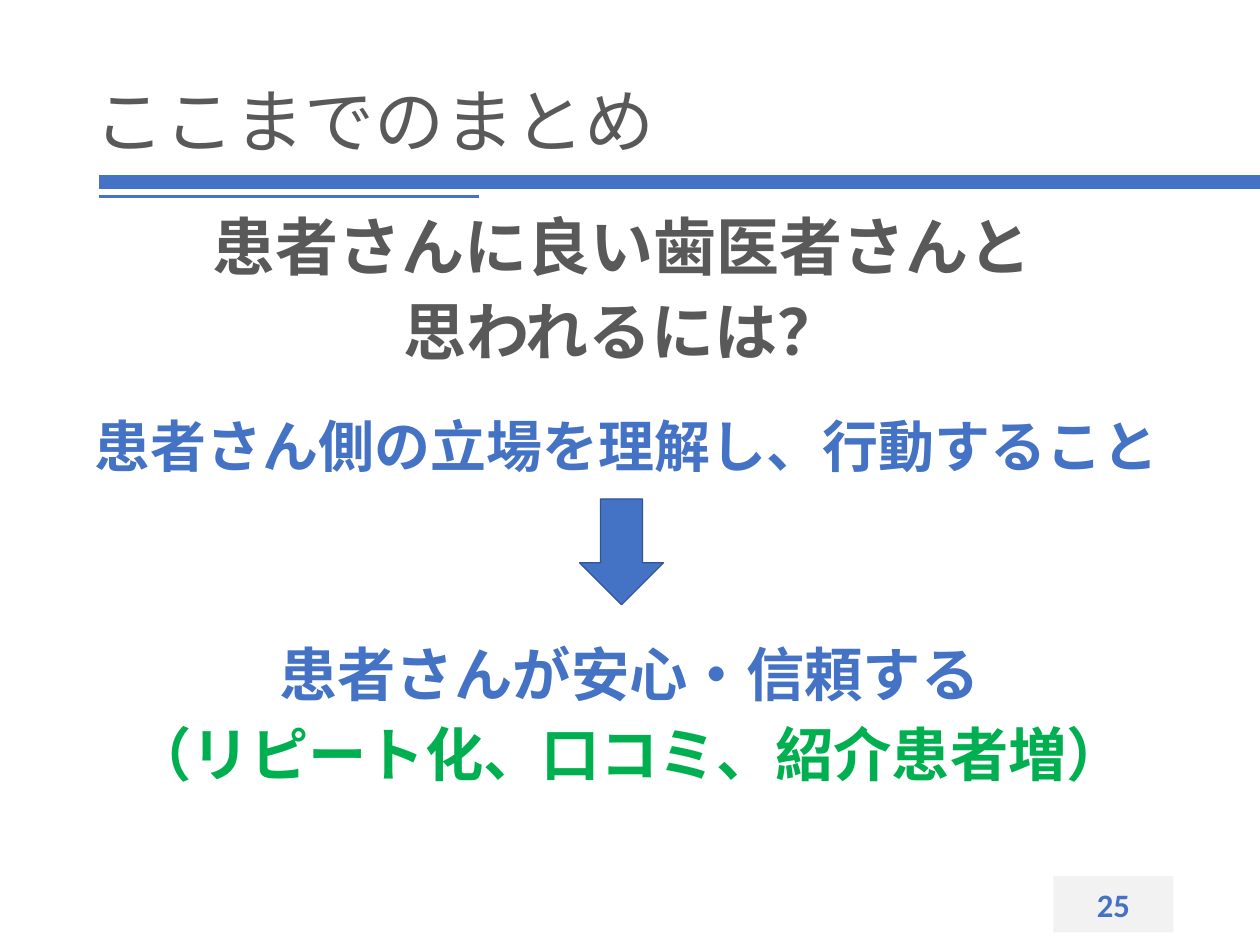
import dataclasses

import lxml.etree
import pptx
import pptx.dml.color
import pptx.enum.shapes
import pptx.enum.text
import pptx.oxml.ns
import pptx.util

ALIGN = pptx.enum.text.PP_ALIGN
ANCHOR = pptx.enum.text.MSO_ANCHOR
SHAPE = pptx.enum.shapes.MSO_SHAPE


@dataclasses.dataclass(frozen=True)
class Theme:
    blue: str = "4472C4"
    dark_blue: str = "325491"
    gray: str = "595959"
    pale: str = "F2F2F2"
    green: str = "00B050"
    japanese: str = "Noto Sans CJK JP"
    latin: str = "Calibri"
    title: int = 60
    question: int = 54
    result: int = 50
    action: int = 48
    page: int = 28


class SlideBuilder:
    COLUMNS, ROWS = 60, 45

    def __init__(self, deck, theme):
        self.theme = theme
        self.slide = deck.slides.add_slide(deck.slide_layouts[6])
        self.column = deck.slide_width / self.COLUMNS
        self.row = deck.slide_height / self.ROWS

    def place(self, left, top, width, height):
        return (round(left * self.column), round(top * self.row),
                round(width * self.column), round(height * self.row))

    def color(self, value):
        return pptx.dml.color.RGBColor.from_string(value)

    def block(self, kind, area, fill, outline=None):
        block = self.slide.shapes.add_shape(kind, *self.place(*area))
        block.shadow.inherit = False
        block.fill.solid()
        block.fill.fore_color.rgb = self.color(fill)
        if outline:
            block.line.color.rgb = self.color(outline)
            block.line.width = pptx.util.Pt(1)
        else:
            block.line.fill.background()
        return block

    def rule(self, left, top, width, color, weight):
        x, y, length, _ = self.place(left, top, width, 0)
        rule = self.slide.shapes.add_connector(
            pptx.enum.shapes.MSO_CONNECTOR.STRAIGHT, x, y, x + length, y)
        rule.line.color.rgb = self.color(color)
        rule.line.width = pptx.util.Pt(weight)
        lxml.etree.SubElement(rule._element.spPr, pptx.oxml.ns.qn("a:effectLst"))

    def text(self, area, lines, size, **style):
        box = self.slide.shapes.add_textbox(*self.place(*area))
        self.fill_text(box.text_frame, lines, size, **style)

    def fill_text(self, frame, lines, size, font=None, bold=True, align=ALIGN.CENTER,
                  anchor=ANCHOR.MIDDLE, spacing=0.9, before=0):
        font = font or self.theme.japanese
        frame.word_wrap = True
        frame.vertical_anchor = anchor
        for index, (words, color) in enumerate(lines):
            paragraph = frame.paragraphs[0] if index == 0 else frame.add_paragraph()
            paragraph.alignment = align
            paragraph.line_spacing = spacing
            paragraph.space_before = pptx.util.Pt(before)
            run = paragraph.add_run()
            run.text = words
            run.font.size = pptx.util.Pt(size)
            run.font.bold = bold
            run.font.color.rgb = self.color(color)
            run.font.name = font
            east_asian = lxml.etree.SubElement(
                run._r.get_or_add_rPr(), pptx.oxml.ns.qn("a:ea"))
            east_asian.set("typeface", font)


def main():
    deck = pptx.Presentation()
    deck.slide_width = pptx.util.Inches(15)
    deck.slide_height = pptx.util.Inches(11.25)
    theme = Theme()
    summary = SlideBuilder(deck, theme)

    rule_left, text_left = 4.72, 4.12
    summary.block(SHAPE.RECTANGLE, (rule_left, 8.36, summary.COLUMNS - rule_left, 0.6),
                  theme.blue, theme.blue)
    summary.rule(rule_left, 9.36, 18.08, theme.blue, 2.25)
    summary.text((text_left, 1.6, 51.76, 8.68), [("ここまでのまとめ", theme.gray)],
                 theme.title, bold=False, align=ALIGN.LEFT)

    page = summary.block(SHAPE.RECTANGLE, (50.16, 41.72, 5.72, 2.68), theme.pale)
    summary.fill_text(page.text_frame, [("25", theme.blue)], theme.page,
                      font=theme.latin, spacing=1)

    summary.text((text_left, 9.52, 51, 8.84),
                 [("患者さんに良い歯医者さんと", theme.gray),
                  ("思われるには？", theme.gray)],
                 theme.question, before=15)
    summary.text((text_left, 19.4, 54.72, 3.64),
                 [("患者さん側の立場を理解し、行動すること", theme.blue)],
                 theme.action, align=ALIGN.LEFT, anchor=ANCHOR.TOP, spacing=1)
    summary.text((4.48, 29.76, 51, 8.84),
                 [("患者さんが安心・信頼する", theme.blue),
                  ("（リピート化、口コミ、紹介患者増）", theme.green)],
                 theme.result, before=15)
    summary.block(SHAPE.DOWN_ARROW, (27.6, 23.76, 4, 5.04), theme.blue, theme.dark_blue)

    deck.save("out.pptx")


if __name__ == "__main__":
    main()
